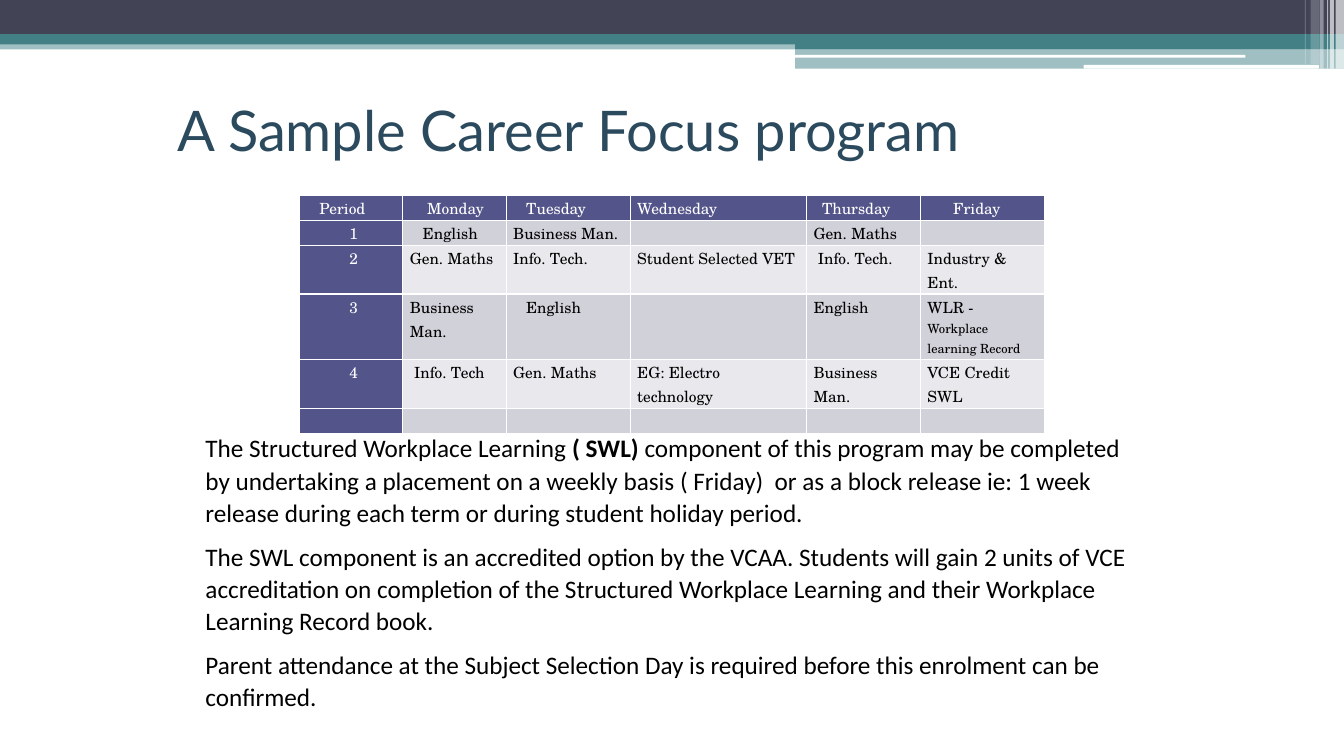
from lxml.etree import SubElement
from pptx import Presentation
from pptx.dml.color import RGBColor
from pptx.enum.shapes import MSO_SHAPE as Preset
from pptx.enum.text import MSO_ANCHOR as Anchor
from pptx.oxml.ns import qn
from pptx.util import Pt

TEAL, NAVY, WHITE, BLACK = "438086", "424456", "FFFFFF", "000000"
PURPLE, BANDS = "53548A", ("D1D1DA", "E9E9ED")
TABLE_FONT, TABLE_SIZE = "TeX Gyre Schola", 11
SPACE = 3.06
COLUMNS = (73.8, 73.8, 88.56, 126, 81.36, 88.56)
ROWS = (17.7, 17.7, 35, 46.8, 35, 17.7)
TIMETABLE = (
    ("Period", "Monday", "Tuesday", "Wednesday", "Thursday", "Friday"),
    ("1", "English", "Business Man.", "", "Gen. Maths", ""),
    ("2", "Gen. Maths", "Info. Tech.", "Student Selected VET", "Info. Tech.", "Industry & Ent."),
    ("3", "Business Man.", "English", "", "English",
     [("WLR - ", {}), ("Workplace learning Record", {"size": 9})]),
    ("4", "Info. Tech", "Gen. Maths", "EG: Electro technology", "Business Man.", "VCE Credit SWL"),
    ("",) * 6,
)
INDENTS = (
    (3, 4, 3, 0, 2, 6),
    (10, 3, 0, 0, 0, 0),
    (10, 0, 0, 0, 1, 0),
    (10, 0, 3, 0, 0, 0),
    (10, 1, 0, 0, 0, 0),
    (0,) * 6,
)
NOTES = (
    [("The Structured Workplace Learning ", {}), ("( SWL)", {"bold": True}),
     (" component of this program may be completed by undertaking a placement on a weekly "
      "basis ( Friday)  or as a block release ie: 1 week release during each term or during "
      "student holiday period.", {})],
    "The SWL component is an accredited option by the VCAA. Students will gain 2 units of VCE "
    "accreditation on completion of the Structured Workplace Learning and their Workplace "
    "Learning Record book.",
    "Parent attendance at the Subject Selection Day is required before this enrolment can be "
    "confirmed.",
)


def rgb(value):
    """Turn a hex string into a colour."""
    return RGBColor.from_string(value)


def write(frame, paragraphs, font, size, color, spacing=None, after=None):
    """Fill a text frame with paragraphs, each a string or a list of (text, format) runs."""
    frame.word_wrap = True
    for index, content in enumerate(paragraphs):
        paragraph = frame.paragraphs[0] if index == 0 else frame.add_paragraph()
        if spacing:
            paragraph.line_spacing = spacing
        if after:
            paragraph.space_after = Pt(after)
        if not content:
            SubElement(paragraph._p, qn("a:endParaRPr"), sz=str(size * 100))
            continue
        for text, style in [(content, {})] if isinstance(content, str) else content:
            run = paragraph.add_run()
            run.text = text
            run.font.name = font
            run.font.size = Pt(style.get("size", size))
            run.font.bold = style.get("bold", False)
            run.font.color.rgb = rgb(color)


def add_bar(slide, left, top, width, height, color, opacity=100, preset=Preset.RECTANGLE):
    """Draw one borderless bar."""
    bar = slide.shapes.add_shape(preset, Pt(left), Pt(top), Pt(width), Pt(height))
    bar.shadow.inherit = False
    bar.fill.solid()
    bar.fill.fore_color.rgb = rgb(color)
    bar.line.fill.background()
    if opacity < 100:
        tint = bar._element.spPr.find(qn("a:solidFill"))[0]
        SubElement(tint, qn("a:alpha"), val=str(opacity * 1000))


def add_banner(slide, left, top, width):
    """Draw the layered band with its pale streaks at the right end."""
    right = left + width
    add_bar(slide, left, top + 28.8, width, 6.5, TEAL, 50)
    add_bar(slide, left, top, width, 24.5, NAVY)
    add_bar(slide, left, top + 24.5, width, 7.2, TEAL)
    add_bar(slide, right - 392, top + 28, 392, 7, TEAL)
    add_bar(slide, right - 392, top + 34.6, 392, 14.4, TEAL, 50)
    add_bar(slide, right - 392.5, top + 39.2, 322, 2, WHITE, preset=Preset.ROUNDED_RECTANGLE)
    add_bar(slide, right - 186, top + 46.4, 168, 2.6, WHITE, preset=Preset.ROUNDED_RECTANGLE)
    streaks = ((6, 6, 49, 65), (10, 2.9, 49, 65), (12, 0.7, 49, 60),
               (17.3, 2.9, 49, 40), (23.8, 5.8, 46, 20), (28, 0.7, 46, 30))
    for offset, thickness, height, opacity in streaks:
        add_bar(slide, right - offset, top, thickness, height, WHITE, opacity)


def add_title(slide, left, top, width, height):
    """Place the heading, centred vertically in its box."""
    frame = slide.shapes.add_textbox(Pt(left), Pt(top), Pt(width), Pt(height)).text_frame
    frame.vertical_anchor = Anchor.MIDDLE
    write(frame, ["A Sample Career Focus program"], "Lato", 40, "2B4A5E")


def add_borders(cell):
    """Give a cell thin white borders on all sides."""
    properties = cell._tc.get_or_add_tcPr()
    for index, side in enumerate("LRTB"):
        line = properties.makeelement(qn(f"a:ln{side}"), {"w": str(Pt(1))})
        SubElement(SubElement(line, qn("a:solidFill")), qn("a:srgbClr"), val=WHITE)
        properties.insert(index, line)


def add_timetable(slide, left, top):
    """Build the weekly timetable."""
    table = slide.shapes.add_table(len(ROWS), len(COLUMNS), Pt(left), Pt(top),
                                   Pt(sum(COLUMNS)), Pt(sum(ROWS))).table
    for column, width in zip(table.columns, COLUMNS):
        column.width = Pt(width)
    for row, height in zip(table.rows, ROWS):
        row.height = Pt(height)
    for r, (entries, indents) in enumerate(zip(TIMETABLE, INDENTS)):
        for c, (entry, indent) in enumerate(zip(entries, indents)):
            heading = r == 0 or c == 0
            cell = table.cell(r, c)
            cell.margin_left = Pt(5 + indent * SPACE)
            cell.margin_right = Pt(5)
            cell.margin_top = cell.margin_bottom = 0
            cell.fill.solid()
            cell.fill.fore_color.rgb = rgb(PURPLE if heading else BANDS[(r - 1) % 2])
            add_borders(cell)
            write(cell.text_frame, [entry], TABLE_FONT, TABLE_SIZE,
                  WHITE if heading else BLACK, spacing=1.07)


def add_notes(slide, left, top, width, height):
    """Place the explanatory paragraphs."""
    frame = slide.shapes.add_textbox(Pt(left), Pt(top), Pt(width), Pt(height)).text_frame
    write(frame, NOTES, "Calibri", 18, BLACK, spacing=1.07, after=8)


def main():
    """Build and save the slide."""
    deck = Presentation()
    deck.slide_width, deck.slide_height = Pt(960), Pt(540)
    slide = deck.slides.add_slide(deck.slide_layouts[6])
    add_banner(slide, 0, 0, 960)
    add_title(slide, 120, 50, 648, 84)
    add_timetable(slide, 214, 139.7)
    add_notes(slide, 139.7, 304, 674.6, 209)
    deck.save("out.pptx")


if __name__ == "__main__":
    main()
